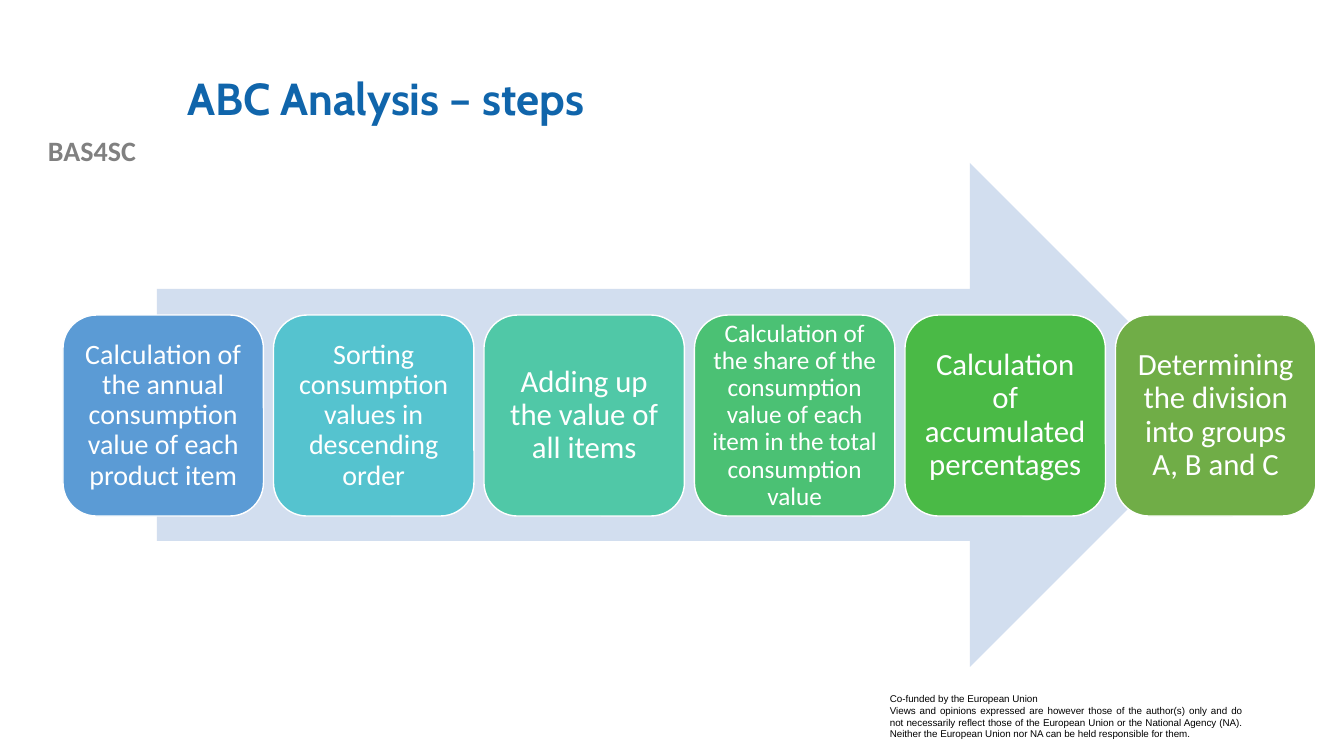
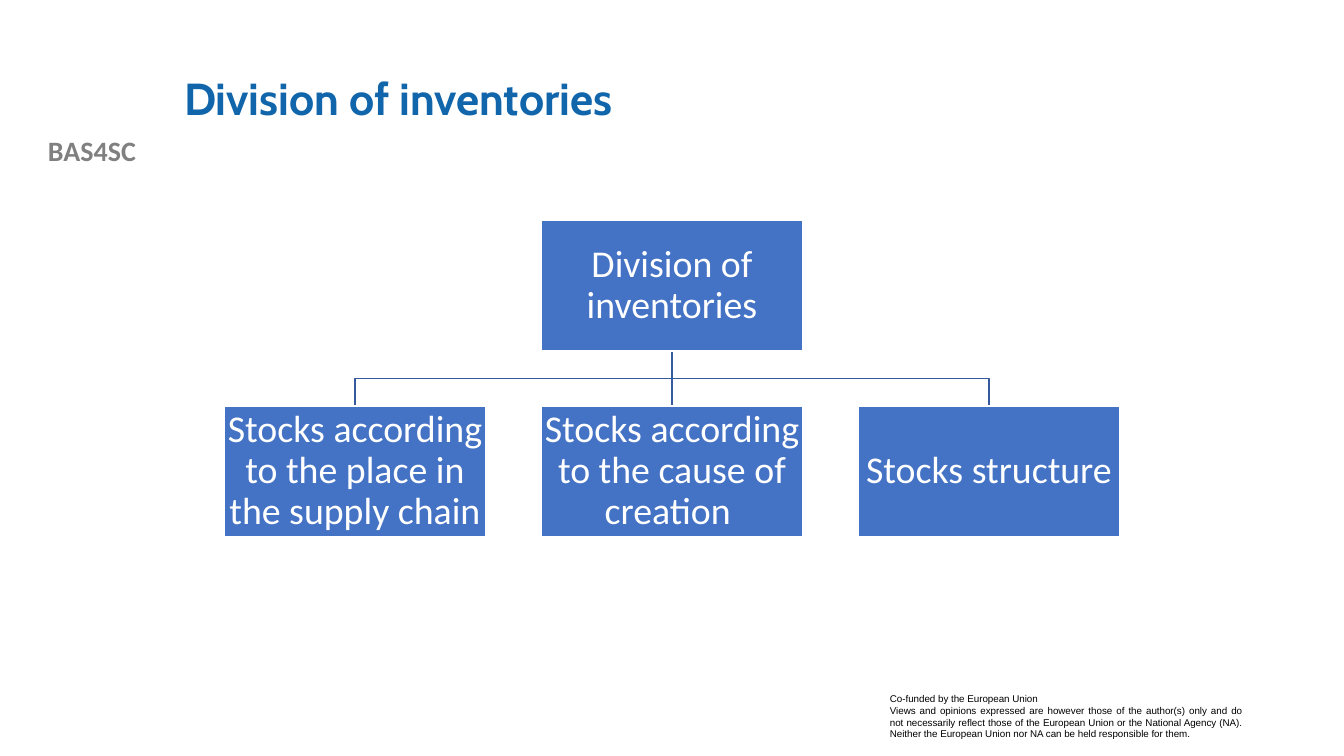
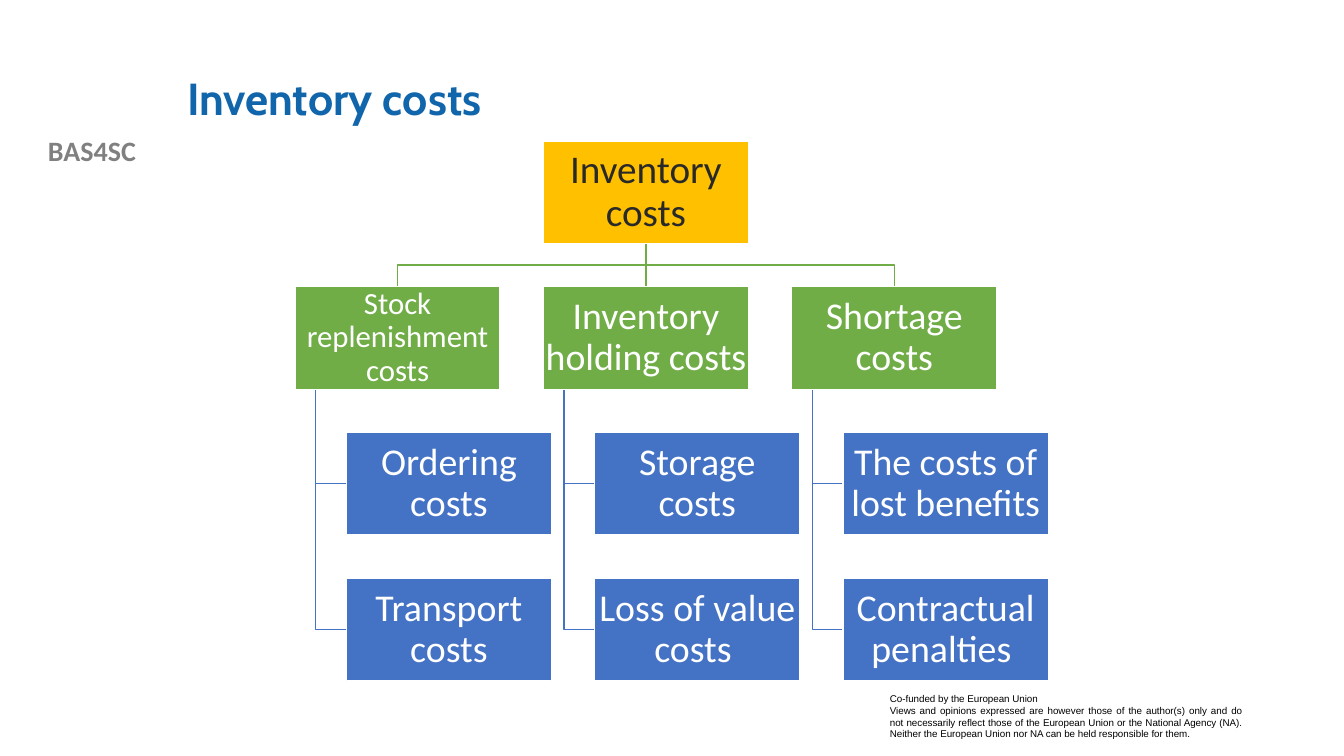
import lxml.etree
import pptx
import pptx.dml.color
import pptx.enum.shapes
import pptx.enum.text
import pptx.oxml.ns
import pptx.util

RGB = pptx.dml.color.RGBColor
SHAPE = pptx.enum.shapes.MSO_SHAPE
ALIGN = pptx.enum.text.PP_ALIGN
ANCHOR = pptx.enum.text.MSO_ANCHOR

WHITE = RGB(0xFF, 0xFF, 0xFF)
BLACK = RGB(0, 0, 0)
GREY = RGB(0x80, 0x80, 0x80)
DARK = RGB(0x29, 0x29, 0x29)
NAVY = RGB(0x10, 0x65, 0xAB)
BLUE = RGB(0x44, 0x72, 0xC4)
STEEL = RGB(0x36, 0x5B, 0x9D)
PALE = RGB(0xD2, 0xDE, 0xEF)
SKY = RGB(0x5B, 0x9B, 0xD5)
AQUA = RGB(0x55, 0xC3, 0xCF)
TEAL = RGB(0x50, 0xC8, 0xA7)
MINT = RGB(0x4B, 0xC1, 0x74)
LEAF = RGB(0x4A, 0xBA, 0x46)
GREEN = RGB(0x70, 0xAD, 0x47)
GOLD = RGB(0xFF, 0xC0, 0x00)

NOTE = [
    "Co-funded by the European Union",
    "Views and opinions expressed are however those of the author(s) only and do "
    "not necessarily reflect those of the European Union or the National Agency (NA). "
    "Neither the European Union nor NA can be held responsible for them.",
]
STEPS = [
    ("Calculation of the annual consumption value of each product item", 20, SKY),
    ("Sorting consumption values in descending order", 20, AQUA),
    ("Adding up the value of all items", 22, TEAL),
    ("Calculation of the share of the consumption value of each item "
     "in the total consumption value", 18, MINT),
    ("Calculation of accumulated percentages", 22, LEAF),
    ("Determining the division into groups A, B and C", 22, GREEN),
]
STOCKS = [
    ("Stocks according to the place in the supply chain", 27, []),
    ("Stocks according to the cause of creation ", 27, []),
    ("Stocks structure", 27, []),
]
COSTS = [
    ("Stock replenishment costs", 22, ["Ordering costs", "Transport costs"]),
    ("Inventory holding costs", 27, ["Storage costs", "Loss of value costs "]),
    ("Shortage costs", 27, ["The costs of lost benefits", "Contractual penalties "]),
]


def px(num):
    return pptx.util.Emu(round(num * 914400 / 100.8))


def put(shape, lines, size, color, face="Calibri", bold=False, align=ALIGN.CENTER,
        anchor=ANCHOR.MIDDLE, inset=None, lead=None):
    """Write one paragraph per line; inset is in px, lead is the line spacing."""
    frame = shape.text_frame
    frame.word_wrap = True
    frame.vertical_anchor = anchor
    if inset is not None:
        frame.margin_left = frame.margin_right = px(inset)
        frame.margin_top = frame.margin_bottom = px(inset)
    frame.text = "\n".join(lines)
    for para in frame.paragraphs:
        para.alignment = align
        para.line_spacing = lead
        font = para.font
        font.name, font.size, font.bold = face, pptx.util.Pt(size), bold
        font.color.rgb = color


def block(slide, kind, box, fill, line=None):
    shape = slide.shapes.add_shape(kind, *map(px, box))
    shape.shadow.inherit = False
    shape.fill.solid()
    shape.fill.fore_color.rgb = fill
    if line is None:
        shape.line.fill.background()
    else:
        shape.line.color.rgb = line
        shape.line.width = pptx.util.Pt(1)
    return shape


def wire(slide, points, color):
    """Draw a straight connector through two points, or a bent line through more."""
    ends = [(px(x), px(y)) for x, y in points]
    if len(ends) == 2:
        line = slide.shapes.add_connector(
            pptx.enum.shapes.MSO_CONNECTOR.STRAIGHT, *ends[0], *ends[1])
        lxml.etree.SubElement(line._element.spPr, pptx.oxml.ns.qn("a:effectLst"))
    else:
        pen = slide.shapes.build_freeform(*ends[0])
        pen.add_line_segments(ends[1:], close=False)
        line = pen.convert_to_shape()
        line.fill.background()
        line.shadow.inherit = False
    line.line.color.rgb = color
    line.line.width = pptx.util.Pt(1)


def start(deck, text, left=177):
    """Add a slide with its title, project label and funding note."""
    slide = deck.slides.add_slide(deck.slide_layouts[5])
    title = slide.shapes.title
    title.left, title.top, title.width, title.height = map(px, (left, 40, 1075, 123))
    put(title, [text], 32, NAVY, "Cabin", True, ALIGN.LEFT, lead=0.9)
    label = slide.shapes.add_textbox(*map(px, (0, 129, 184, 44)))
    put(label, ["BAS4SC"], 20, GREY, bold=True, anchor=ANCHOR.TOP)
    note = block(slide, SHAPE.RECTANGLE, (880, 688, 372, 57), WHITE)
    put(note, NOTE, 7, BLACK, "Arial", align=ALIGN.JUSTIFY, anchor=ANCHOR.TOP)
    return slide


def row(slide, box, steps, gap=10):
    """Lay rounded cards of equal width side by side in the box."""
    left, top, width, height = box
    each = (width - gap * (len(steps) - 1)) / len(steps)
    for col, (text, size, fill) in enumerate(steps):
        spot = (left + col * (each + gap), top, each, height)
        card = block(slide, SHAPE.ROUNDED_RECTANGLE, spot, fill, WHITE)
        put(card, [text], size, WHITE, inset=round(size * 0.4), lead=0.9)


def tree(slide, left, top, width, root, groups, fill, wiring):
    """Draw a root, a row of groups and their hanging items.

    Node height and gaps follow from the node width; root is text, size, fill, ink.
    """
    count = len(groups)
    node = width / (count + 0.21 * (count - 1))
    high, gap = node / 2, 0.21 * node
    step = high + gap
    mid, base = left + width / 2, top + high
    second = top + step
    name, size, shade, ink = root
    nodes = [(mid - node / 2, top, name, size, shade, ink)]
    for col, (text, size, items) in enumerate(groups):
        x = left + col * (node + gap)
        hub = x + node / 2
        if abs(hub - mid) < 1:
            path = [(mid, base), (mid, second)]
        else:
            bend = base + gap / 2
            path = [(mid, base), (mid, bend), (hub, bend), (hub, second)]
        wire(slide, path, wiring)
        nodes.append((x, second, text, size, fill, WHITE))
        spine, inner = x + 0.1 * node, x + 0.25 * node
        for rank, item in enumerate(items, 1):
            y = second + rank * step
            wire(slide, [(spine, second + high), (spine, y + high / 2),
                         (inner, y + high / 2)], BLUE)
            nodes.append((inner, y, item, 27, BLUE, WHITE))
    for x, y, text, size, shade, ink in nodes:
        shape = block(slide, SHAPE.RECTANGLE, (x, y, node, high), shade, WHITE)
        put(shape, [text], size, ink, inset=2, lead=0.9)


def main():
    deck = pptx.Presentation()
    deck.slide_width, deck.slide_height = px(1344), px(756)

    slide = start(deck, "ABC Analysis – steps")
    block(slide, SHAPE.RIGHT_ARROW, (157, 163, 1065, 504), PALE)
    row(slide, (63, 315, 1253, 201), STEPS)

    slide = start(deck, "Division of inventories", 174)
    tree(slide, 224, 220, 896, ("Division of inventories", 27, BLUE, WHITE),
         STOCKS, BLUE, STEEL)

    slide = start(deck, "Inventory costs")
    tree(slide, 295, 141, 702, ("Inventory costs", 28, GOLD, DARK),
         COSTS, GREEN, GREEN)

    deck.save("out.pptx")


if __name__ == "__main__":
    main()
